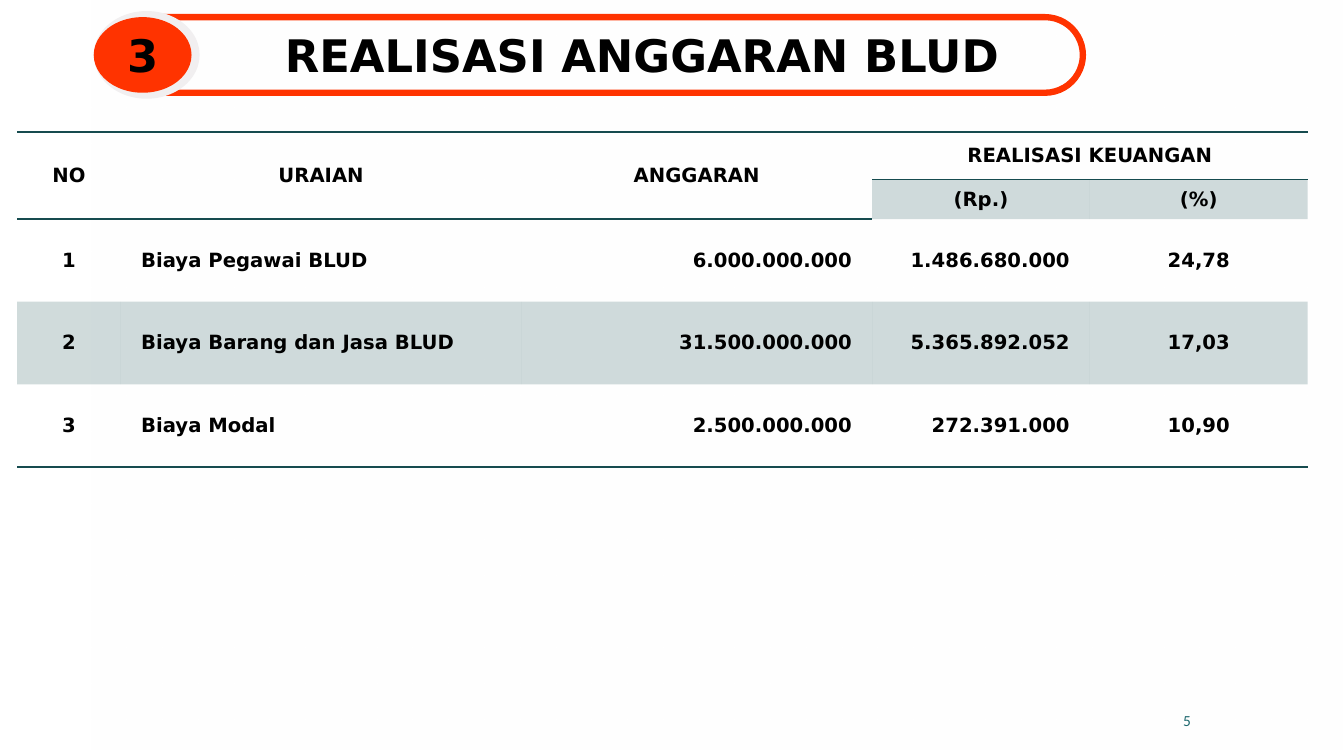
from dataclasses import dataclass
from typing import NamedTuple, Optional

from lxml.etree import SubElement
from pptx import Presentation
from pptx.dml.color import RGBColor
from pptx.enum.shapes import MSO_SHAPE
from pptx.enum.text import MSO_ANCHOR, PP_ALIGN
from pptx.oxml import parse_xml
from pptx.oxml.ns import nsdecls, qn
from pptx.util import Inches, Pt


@dataclass(frozen=True)
class Theme:
    white: str = "FFFFFF"
    black: str = "000000"
    accent: str = "FF3300"
    halo: str = "F1EFF0"
    rule: str = "164B4F"
    page: str = "1F696F"
    font: str = "DejaVu Sans"
    page_font: str = "Calibri"
    title_size: int = 32
    table_size: int = 14
    page_size: int = 11


class Box(NamedTuple):
    left: float
    top: float
    width: float
    height: float


class Figure(NamedTuple):
    kind: MSO_SHAPE
    box: Box
    fill: Optional[str] = None
    line: Optional[str] = None
    text: str = ""


T = Theme()
LEFT, CENTER, RIGHT = PP_ALIGN.LEFT, PP_ALIGN.CENTER, PP_ALIGN.RIGHT
NO_STYLE = "{2D5ABB26-0587-4C30-8999-92F81FD0307C}"

TITLE_FIGURES = [
    Figure(MSO_SHAPE.ROUNDED_RECTANGLE, Box(1.09, 0.17, 9.65, 0.75), line=T.accent),
    Figure(MSO_SHAPE.OVAL, Box(0.93, 0.11, 1.05, 0.87), T.halo),
    Figure(MSO_SHAPE.OVAL, Box(0.93, 0.17, 0.97, 0.75), T.accent, text="3"),
]

TABLE_BOX = Box(0.17, 1.31, 12.8, 3.32)
COL_WIDTHS = [1.03, 3.97, 3.48, 2.16, 2.16]
ROW_HEIGHTS = [0.47, 0.39, 0.82, 0.82, 0.82]
BODY_ALIGN = [CENTER, LEFT, RIGHT, RIGHT, CENTER]
ROWS = [
    ["NO", "URAIAN", "ANGGARAN", "REALISASI KEUANGAN", ""],
    ["", "", "", "(Rp.)", "(%)"],
    ["1", "Biaya Pegawai BLUD", "6.000.000.000", "1.486.680.000", "24,78"],
    ["2", "Biaya Barang dan Jasa BLUD", "31.500.000.000", "5.365.892.052", "17,03"],
    ["3", "Biaya Modal", "2.500.000.000", "272.391.000", "10,90"],
]
HEADER_ROWS = 2
TALL_HEADERS = 3  # columns whose heading spans both header rows


def rgb(color: str) -> RGBColor:
    return RGBColor.from_string(color)


def emu(box: Box) -> list:
    return [Inches(v) for v in box]


def write(tf, text: str, *, size: int, color: str = T.black, font: str = T.font,
          bold: bool = True, align=CENTER) -> None:
    p = tf.paragraphs[0]
    p.alignment = align
    r = p.add_run()
    r.text = text
    r.font.name, r.font.size, r.font.bold = font, Pt(size), bold
    r.font.color.rgb = rgb(color)


def set_margins(target, x: float, y: float) -> None:
    target.margin_left = target.margin_right = Inches(x)
    target.margin_top = target.margin_bottom = Inches(y)


def set_alpha(color_element, percent: int) -> None:
    SubElement(color_element, qn("a:alpha")).set("val", str(percent * 1000))


def add_text(s, box: Box, text: str, *, anchor=MSO_ANCHOR.TOP,
             margins: tuple = (0.1, 0.05), **fmt) -> None:
    tf = s.shapes.add_textbox(*emu(box)).text_frame
    tf.word_wrap = True
    tf.vertical_anchor = anchor
    set_margins(tf, *margins)
    write(tf, text, **fmt)


def add_figure(s, fig: Figure):
    sp = s.shapes.add_shape(fig.kind, *emu(fig.box))
    sp.shadow.inherit = False
    if fig.kind == MSO_SHAPE.ROUNDED_RECTANGLE:
        sp.adjustments[0] = 0.5
    if fig.fill:
        sp.fill.solid()
        sp.fill.fore_color.rgb = rgb(fig.fill)
    else:
        sp.fill.background()
    if fig.line:
        sp.line.color.rgb = rgb(fig.line)
        sp.line.width = Pt(4.5)
    else:
        sp.line.fill.background()
    if fig.text:
        sp.text_frame.vertical_anchor = MSO_ANCHOR.MIDDLE
        write(sp.text_frame, fig.text, size=T.title_size)
    return sp


def add_veil(s) -> None:
    sp = add_figure(s, Figure(MSO_SHAPE.RECTANGLE, Box(0.91, 0, 12.41, 7.5)))
    sp.fill.gradient()
    sp.fill.gradient_angle = 270
    for stop, percent in zip(sp.fill.gradient_stops, (60, 0)):
        stop.color.rgb = rgb(T.white)
    for color, percent in zip(sp._element.spPr.iter(qn("a:srgbClr")), (60, 0)):
        set_alpha(color, percent)


def style_cell(cell, row: int, col: int) -> None:
    cell.vertical_anchor = MSO_ANCHOR.MIDDLE
    set_margins(cell, 0.2, 0.08)
    tc_pr = cell._tc.get_or_add_tcPr()
    # Shaded bands
    if row == 3 or (row == 1 and col >= TALL_HEADERS):
        cell.fill.solid()
        cell.fill.fore_color.rgb = rgb(T.rule)
        set_alpha(next(tc_pr.iter(qn("a:srgbClr"))), 20)
    else:
        cell.fill.background()
    # Rules go before the fill, top first
    sides = ["lnT"] if row == 0 else []
    if row in (0, len(ROWS) - 1) or (row == 1 and col < TALL_HEADERS):
        sides.append("lnB")
    for i, side in enumerate(sides):
        tc_pr.insert(i, parse_xml(
            f'<a:{side} {nsdecls("a")} w="{Pt(1)}"><a:solidFill>'
            f'<a:srgbClr val="{T.rule}"/></a:solidFill></a:{side}>'))


def add_budget_table(s) -> None:
    table = s.shapes.add_table(len(ROWS), len(COL_WIDTHS), *emu(TABLE_BOX)).table
    table.first_row = table.horz_banding = False
    table._tbl.tblPr.find(qn("a:tableStyleId")).text = NO_STYLE
    for column, width in zip(table.columns, COL_WIDTHS):
        column.width = Inches(width)
    for row, height in zip(table.rows, ROW_HEIGHTS):
        row.height = Inches(height)
    for i, texts in enumerate(ROWS):
        for j, text in enumerate(texts):
            cell = table.cell(i, j)
            style_cell(cell, i, j)
            if text:
                align = CENTER if i < HEADER_ROWS else BODY_ALIGN[j]
                write(cell.text_frame, text, size=T.table_size, align=align)
    for j in range(TALL_HEADERS):
        table.cell(0, j).merge(table.cell(1, j))
    table.cell(0, 3).merge(table.cell(0, 4))


def main() -> None:
    prs = Presentation()
    prs.slide_width, prs.slide_height = Inches(13.33), Inches(7.5)
    s = prs.slides.add_slide(prs.slide_layouts[6])
    # Background
    add_veil(s)
    # Title capsule with number
    add_text(s, Box(1.74, 0.2, 9.26, 0.69), "REALISASI ANGGARAN BLUD",
             margins=(0.15, 0.07), size=T.title_size)
    for fig in TITLE_FIGURES:
        add_figure(s, fig)
    # Page number
    add_text(s, Box(8.8, 6.95, 3.11, 0.4), "5", anchor=MSO_ANCHOR.MIDDLE,
             size=T.page_size, color=T.page, font=T.page_font, bold=False, align=RIGHT)
    # Budget table
    add_budget_table(s)
    prs.save("out.pptx")


if __name__ == "__main__":
    main()
